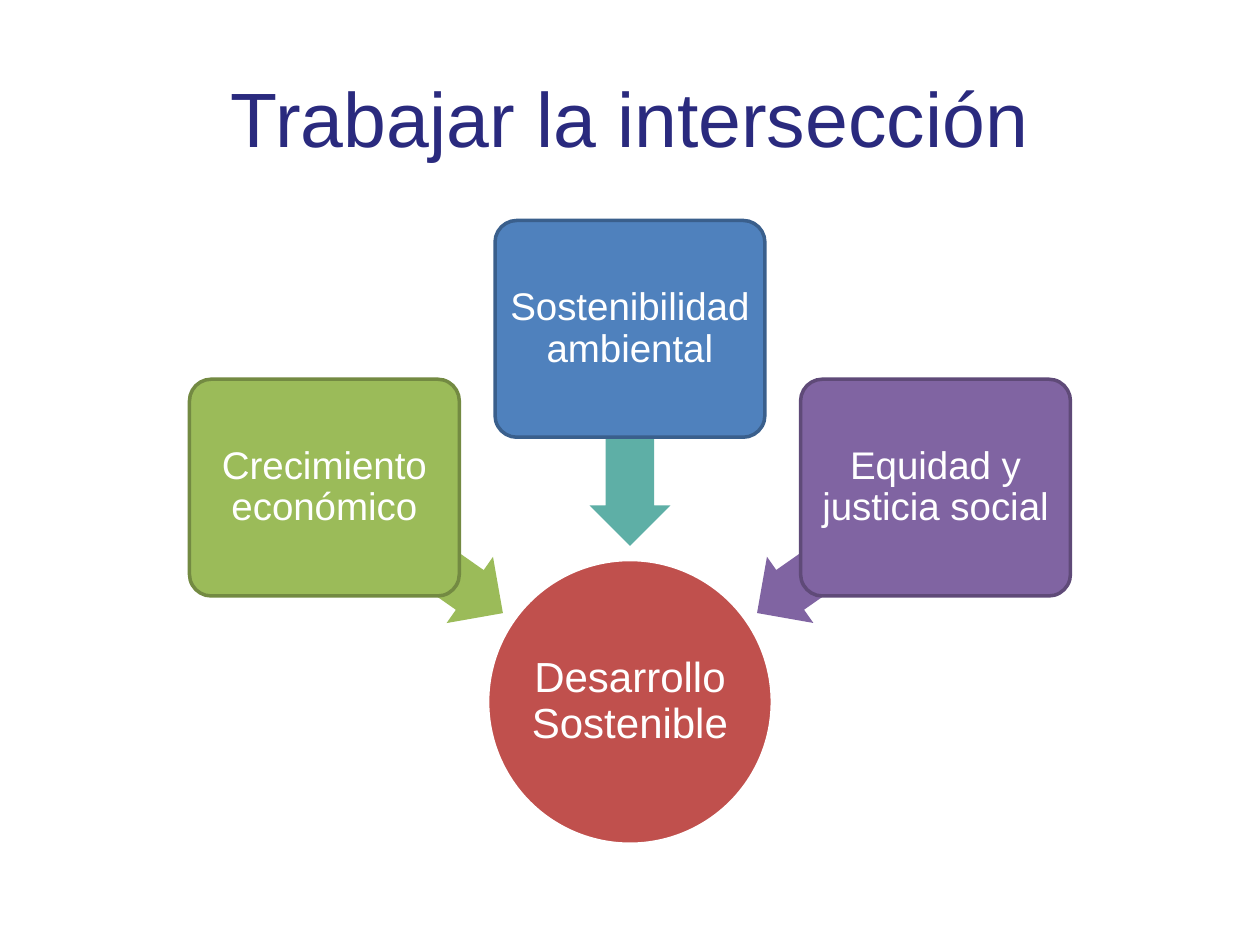
from pptx import Presentation
from pptx.dml.color import RGBColor
from pptx.enum.shapes import MSO_SHAPE
from pptx.enum.text import MSO_ANCHOR, PP_ALIGN
from pptx.util import Cm, Pt

CIRCLE = MSO_SHAPE.OVAL
BOX = MSO_SHAPE.ROUNDED_RECTANGLE
ARROW = MSO_SHAPE.LEFT_ARROW
MIDDLE = MSO_ANCHOR.MIDDLE
CENTER = PP_ALIGN.CENTER

COLORS = {
    "title": "2A2A7E", "white": "FFFFFF", "red": "C0504D", "teal": "5EAFA6",
    "green": "9BBB59", "dark green": "738A42",
    "blue": "4F81BD", "dark blue": "3A5F8C",
    "purple": "8064A2", "dark purple": "5F4A78",
}


def write(shape, text, size, color="white", inset=0.13, spacing=0.9):
    frame = shape.text_frame
    frame.word_wrap = True
    frame.vertical_anchor = MIDDLE
    frame.margin_left = frame.margin_right = Cm(inset)
    frame.margin_top = frame.margin_bottom = Cm(inset)
    paragraph = frame.paragraphs[0]
    paragraph.text = text
    paragraph.alignment = CENTER
    paragraph.line_spacing = spacing
    paragraph.font.size = Pt(size)
    paragraph.font.name = "Arial"
    paragraph.font.color.rgb = RGBColor.from_string(COLORS[color])


def draw(kind, center_x, center_y, width, height, fill, line=None):
    """Add a preset shape placed by its centre, in centimetres."""
    shape = slide.shapes.add_shape(
        kind, Cm(center_x - width / 2), Cm(center_y - height / 2), Cm(width), Cm(height))
    shape.shadow.inherit = False
    shape.fill.solid()
    shape.fill.fore_color.rgb = RGBColor.from_string(COLORS[fill])
    if line:
        shape.line.color.rgb = RGBColor.from_string(COLORS[line])
        shape.line.width = Pt(2)
    else:
        shape.line.fill.background()
    return shape


prs = Presentation()
prs.slide_width, prs.slide_height = Cm(25.4), Cm(19.05)
slide = prs.slides.add_slide(prs.slide_layouts[5])

title = slide.shapes.title
title.left, title.top, title.width, title.height = Cm(1.27), Cm(0.76), Cm(22.86), Cm(3.18)
write(title, "Trabajar la intersección", 44, color="title", spacing=1.0)

AXIS = 12.7
goal = draw(CIRCLE, AXIS, 14.15, 5.74, 5.74, "red", "white")
write(goal, "Desarrollo Sostenible", 24, inset=0.05)

# text, side of the axis, box centre y, arrow centre y, rotation, box, outline, arrow
pillars = [
    ("Crecimiento económico", -1, 9.83, 11.1, 215, "green", "dark green", "green"),
    ("Sostenibilidad ambiental", 0, 6.63, 8.81, 270, "blue", "dark blue", "teal"),
    ("Equidad y justicia social", 1, 9.83, 11.1, 325, "purple", "dark purple", "purple"),
]
for text, side, box_y, arrow_y, rotation, fill, outline, arrow_fill in pillars:
    arrow = draw(ARROW, AXIS + side * 4.36, arrow_y, 4.39, 1.63, arrow_fill)
    arrow.adjustments[0] = 0.6
    arrow.adjustments[1] = 0.5
    arrow.rotation = rotation
    pillar = draw(BOX, AXIS + side * 6.16, box_y, 5.44, 4.37, fill, outline)
    pillar.adjustments[0] = 0.1
    write(pillar, text, 22)

prs.save("out.pptx")
